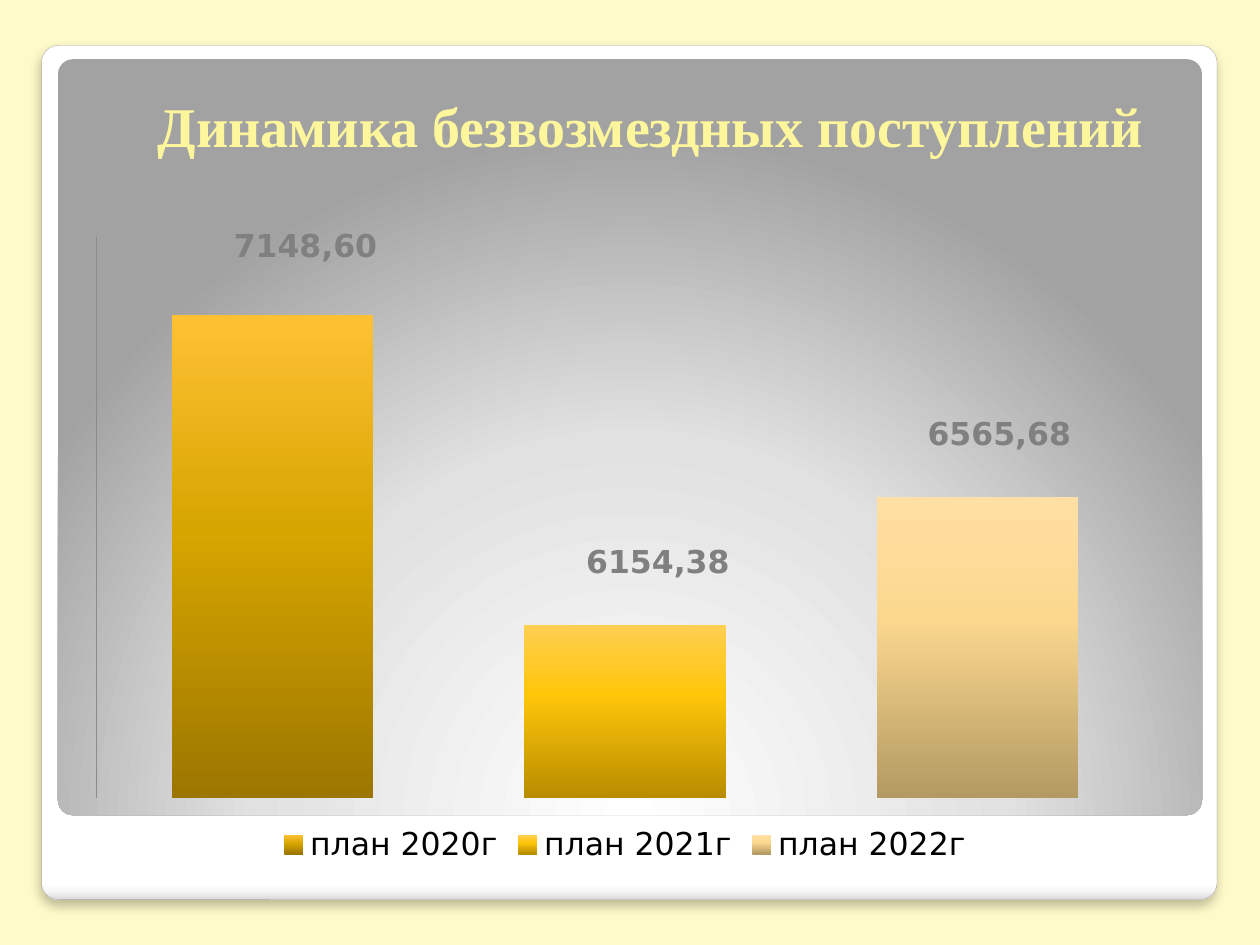
from lxml import etree
from pptx import Presentation
from pptx import util as u
from pptx.chart.data import CategoryChartData
from pptx.dml.color import RGBColor
from pptx.enum import chart as charts, shapes, text
from pptx.oxml.ns import qn

COLOURS = {"page": "FEFAC9", "title": "FDF69C", "edge": "A4A4A4", "label": "808080",
           "axis": "8B8B8B", "legend": "000000", "shadow": "000000"}
FRAME_STOPS = [(0, "FFFFFF"), (98, "FFFFFF"), (99, "F7F7F7"), (100, "DADADA")]
PANEL_STOPS = [(0, "FFFFFF"), (55, "E1E1E1"), (100, "A2A2A2")]
PLANS = [
    ("план 2020г", 7148.6, (0.03, -0.07), [(0, "FFC133"), (45, "D6A500"), (100, "9C7600")]),
    ("план 2021г", 6154.38, (0.03, -0.06), [(0, "FFCF52"), (40, "FFC60A"), (100, "B88C00")]),
    ("план 2022г", 6565.68, (0.02, -0.06), [(0, "FFDFA3"), (40, "FCD88F"), (100, "B39A62")]),
]


def rgb(name):
    """Return the named colour."""
    return RGBColor.from_string(COLOURS[name])


def add_node(parent, tag, **values):
    """Append an XML child with the given attributes."""
    return etree.SubElement(parent, qn(tag), {key: str(value) for key, value in values.items()})


def set_format(target, **values):
    """Set each format value on the target."""
    for name, value in values.items():
        setattr(target, name, value)


def set_font(font, colour, **values):
    """Set the colour and the other values of a font."""
    font.color.rgb = rgb(colour)
    set_format(font, **values)


def set_gradient(gradient, stops, radial=False):
    """Replace the stops and direction of a gradient fill element."""
    for child in list(gradient):
        gradient.remove(child)
    stop_list = add_node(gradient, "a:gsLst")
    for place, colour in stops:
        add_node(add_node(stop_list, "a:gs", pos=place * 1000), "a:srgbClr", val=colour)
    if radial:
        circle = add_node(gradient, "a:path", path="circle")
        add_node(circle, "a:fillToRect", l=50000, t=175000, r=50000, b=-75000)
    else:
        add_node(gradient, "a:lin", ang=90 * 60000, scaled=0)


def add_panel(page, place, stops, radial=False):
    """Add a rounded rectangle with a gradient fill and no line."""
    panel = page.shapes.add_shape(shapes.MSO_SHAPE.ROUNDED_RECTANGLE, *map(u.Inches, place))
    panel.adjustments[0] = 0.02
    panel.shadow.inherit = False
    panel.fill.gradient()
    set_gradient(next(panel._element.iter(qn("a:gradFill"))), stops, radial)
    panel.line.fill.background()
    return panel


def add_frame(page):
    """Add the white frame with its thin edge and soft shadow."""
    frame = add_panel(page, (0.33, 0.36, 9.33, 6.78), FRAME_STOPS)
    frame.line.color.rgb = rgb("edge")
    frame.line.width = u.Pt(0.16)
    effects = next(frame._element.iter(qn("a:effectLst")))
    shadow = add_node(effects, "a:outerShdw", blurRad=u.Pt(6), dist=u.Pt(4),
                      dir=90 * 60000, algn="t", rotWithShape=0)
    add_node(add_node(shadow, "a:srgbClr", val=COLOURS["shadow"]), "a:alpha", val=25000)


def add_title(page, words):
    """Add the centred heading."""
    box = page.shapes.add_textbox(*map(u.Inches, (0.43, 0.6, 8.91, 0.71)))
    set_format(box.text_frame, word_wrap=True, margin_left=u.Inches(0.66),
               vertical_anchor=text.MSO_ANCHOR.BOTTOM)
    para = box.text_frame.paragraphs[0]
    para.alignment = text.PP_ALIGN.CENTER
    span = para.add_run()
    span.text = words
    set_font(span.font, "title", name="Times New Roman", size=u.Pt(32), bold=True)


def set_layout(layout, **values):
    """Give a chart part a manual layout."""
    manual = add_node(layout, "c:manualLayout")
    for tag, value in values.items():
        add_node(manual, "c:" + tag, val=value)


def style_axes(chart):
    """Leave only the line of the value axis."""
    chart.category_axis.visible = False
    axis = chart.value_axis
    set_format(axis, minimum_scale=5600, maximum_scale=7400, has_major_gridlines=False,
               major_tick_mark=charts.XL_TICK_MARK.NONE,
               tick_label_position=charts.XL_TICK_LABEL_POSITION.NONE)
    axis.format.line.color.rgb = rgb("axis")
    axis.format.line.width = u.Pt(0.75)


def style_bars(series):
    """Colour each bar and place its value above it, without leader lines."""
    series.data_labels.show_value = True
    for index, (_, value, _, _) in enumerate(PLANS):
        point = series.points[index]
        point.format.fill.gradient()
        point.data_label.position = charts.XL_LABEL_POSITION.OUTSIDE_END
        span = point.data_label.text_frame.paragraphs[0].add_run()
        span.text = f"{value:.2f}".replace(".", ",")
        set_font(span.font, "label", name="DejaVu Sans", size=u.Pt(18), bold=True)
    for leader in series._element.iter(qn("c:showLeaderLines")):
        leader.set("val", "0")
    gradients = list(series._element.iter(qn("a:gradFill")))
    labels = list(series._element.iter(qn("c:dLbl")))
    for (_, _, (x, y), stops), gradient, label in zip(PLANS, gradients, labels):
        set_gradient(gradient, stops)
        layout = etree.Element(qn("c:layout"))
        label.find(qn("c:idx")).addnext(layout)
        set_layout(layout, x=x, y=y)


def add_plan_chart(page):
    """Add the column chart of the yearly plans."""
    data = CategoryChartData()
    data.categories = [plan[0] for plan in PLANS]
    data.add_series("Series 1", [plan[1] for plan in PLANS])
    place = map(u.Inches, (0.59, 1.78, 8.74, 5.12))
    chart = page.shapes.add_chart(charts.XL_CHART_TYPE.COLUMN_CLUSTERED, *place, data).chart
    set_format(chart, has_title=False, has_legend=True)
    set_font(chart.font, "legend", name="DejaVu Sans", size=u.Pt(18))
    set_format(chart.legend, position=charts.XL_LEGEND_POSITION.BOTTOM, include_in_layout=False)
    plot = chart.plots[0]
    set_format(plot, vary_by_categories=True, gap_width=75)
    style_axes(chart)
    style_bars(plot.series[0])
    area = next(chart._chartSpace.iter(qn("c:plotArea")))
    layout = area.find(qn("c:layout"))
    if layout is None:
        layout = etree.Element(qn("c:layout"))
        area.insert(0, layout)
    set_layout(layout, layoutTarget="inner", xMode="edge", yMode="edge",
               x=0.02, y=0.02, w=0.96, h=0.87)


def main():
    """Build and save the slide."""
    deck = Presentation()
    set_format(deck, slide_width=u.Inches(10), slide_height=u.Inches(7.5))
    page = deck.slides.add_slide(deck.slide_layouts[6])
    page.background.fill.solid()
    page.background.fill.fore_color.rgb = rgb("page")
    add_frame(page)
    add_panel(page, (0.46, 0.47, 9.08, 6), PANEL_STOPS, radial=True)
    add_title(page, "Динамика безвозмездных поступлений")
    add_plan_chart(page)
    deck.save("out.pptx")


if __name__ == "__main__":
    main()
